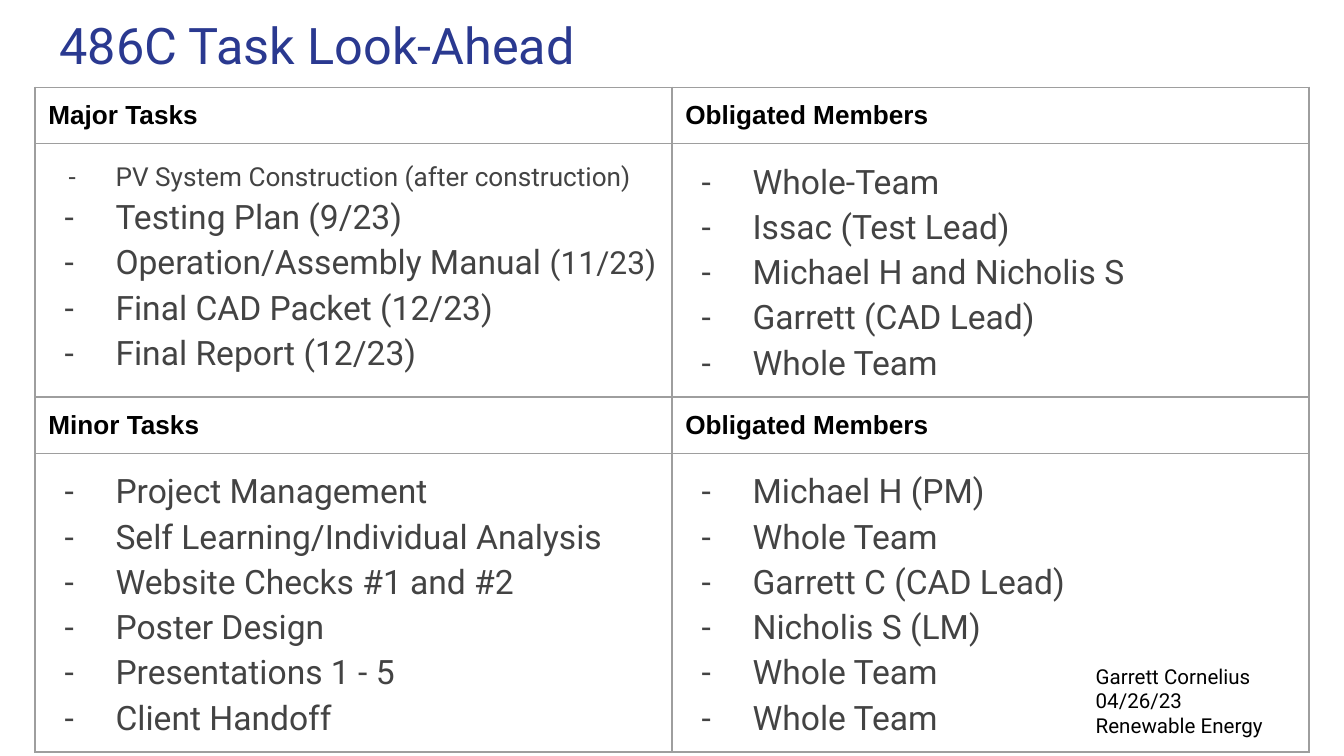
from lxml import etree
from pptx import Presentation
from pptx.dml.color import RGBColor
from pptx.enum import text
from pptx.oxml import ns
from pptx.util import Inches, Pt

THEME = {
    "navy": "2A3990", "black": "000000", "gray": "434343", "rule": "9E9E9E",
    "body_font": "Roboto", "head_font": "Arial",
    "title": 27, "list": 18, "date": 17, "head": 14, "note": 11,
}
TITLE = {"size": Pt(THEME["title"]), "name": THEME["body_font"], "color": THEME["navy"]}
NOTE = {"size": Pt(THEME["note"]), "name": THEME["body_font"], "color": THEME["black"]}
HEAD = {"size": Pt(THEME["head"]), "name": THEME["head_font"], "bold": True, "color": THEME["black"]}
LIST = {"size": Pt(THEME["list"]), "name": THEME["body_font"], "bold": False, "color": THEME["gray"]}
SMALL = {**LIST, "size": Pt(THEME["head"])}
DATE = {**LIST, "size": Pt(THEME["date"])}
CELL = {f"margin_{side}": Inches(0.1) for side in ("left", "right", "top", "bottom")}
BOX = {**CELL, "word_wrap": True}

ROWS = [
    (6.93, [["Major Tasks"], ["Obligated Members"]]),
    (33.24, [
        [[("PV System Construction (after construction)", SMALL)], "Testing Plan (9/23)",
         [("Operation/Assembly Manual ", LIST), ("(11/23)", DATE)],
         "Final CAD Packet (12/23)", "Final Report (12/23)"],
        ["Whole-Team", "Issac (Test Lead)", "Michael H and Nicholis S",
         "Garrett (CAD Lead)", "Whole Team"]]),
    (6.93, [["Minor Tasks"], ["Obligated Members"]]),
    (35.56, [
        ["Project Management", "Self Learning/Individual Analysis", "Website Checks #1 and #2",
         "Poster Design", "Presentations 1 - 5", "Client Handoff"],
        ["Michael H (PM)", "Whole Team", "Garrett C (CAD Lead)", "Nicholis S (LM)",
         "Whole Team", "Whole Team"]]),
]

prs = Presentation()
W = Inches(10)
H = W * 9 // 16
prs.slide_width, prs.slide_height = W, H
s = prs.slides.add_slide(prs.slide_layouts[6])


def place(x, y, w, h):
    return [int(share * side / 100) for share, side in zip((x, y, w, h), (W, H, W, H))]


def write(tf, lines, style, bullet=False):
    for i, line in enumerate(lines):
        p = tf.paragraphs[0] if i == 0 else tf.add_paragraph()
        runs = [(line, style)] if isinstance(line, str) else line
        if bullet:
            pPr = p._p.get_or_add_pPr()
            pPr.set("marL", str(Inches(0.5)))
            pPr.set("indent", str(-Inches(0.35 if runs[0][1] is SMALL else 0.38)))
            clr = etree.SubElement(pPr, ns.qn("a:buClr"))
            etree.SubElement(clr, ns.qn("a:srgbClr"), val=THEME["gray"])
            etree.SubElement(pPr, ns.qn("a:buFont"), typeface=THEME["body_font"])
            etree.SubElement(pPr, ns.qn("a:buChar"), char="-")
            p.line_spacing = 1.15
        for words, fmt in runs:
            r = p.add_run()
            r.text = words
            for key, value in fmt.items():
                if key == "color":
                    r.font.color.rgb = RGBColor.from_string(value)
                else:
                    setattr(r.font, key, value)


height = sum(share for share, cells in ROWS)
tbl = s.shapes.add_table(len(ROWS), 2, *place(2.6, 11.55, 94.8, height)).table
tbl.first_row = tbl.horz_banding = False
for row, (share, cells) in enumerate(ROWS):
    tbl.rows[row].height = int(share * H / 100)
    for col, lines in enumerate(cells):
        cell = tbl.cell(row, col)
        for key, value in CELL.items():
            setattr(cell, key, value)
        tcPr = cell._tc.get_or_add_tcPr()
        for side in ("lnL", "lnR", "lnT", "lnB"):
            ln = etree.SubElement(tcPr, ns.qn(f"a:{side}"), w=str(Pt(0.75)))
            fill = etree.SubElement(ln, ns.qn("a:solidFill"))
            etree.SubElement(fill, ns.qn("a:srgbClr"), val=THEME["rule"])
        cell.fill.background()
        listed = row % 2 == 1
        write(cell.text_frame, lines, LIST if listed else HEAD, listed)

for at, lines, style, anchor in (
    ((3.44, 0, 93.2, 11.7), ["486C Task Look-Ahead"], TITLE, text.MSO_ANCHOR.MIDDLE),
    ((80.54, 86, 16.9, 13.5), ["Garrett Cornelius", "04/26/23", "Renewable Energy"],
     NOTE, text.MSO_ANCHOR.TOP),
):
    tf = s.shapes.add_textbox(*place(*at)).text_frame
    for key, value in {**BOX, "vertical_anchor": anchor}.items():
        setattr(tf, key, value)
    write(tf, lines, style)

prs.save("out.pptx")
